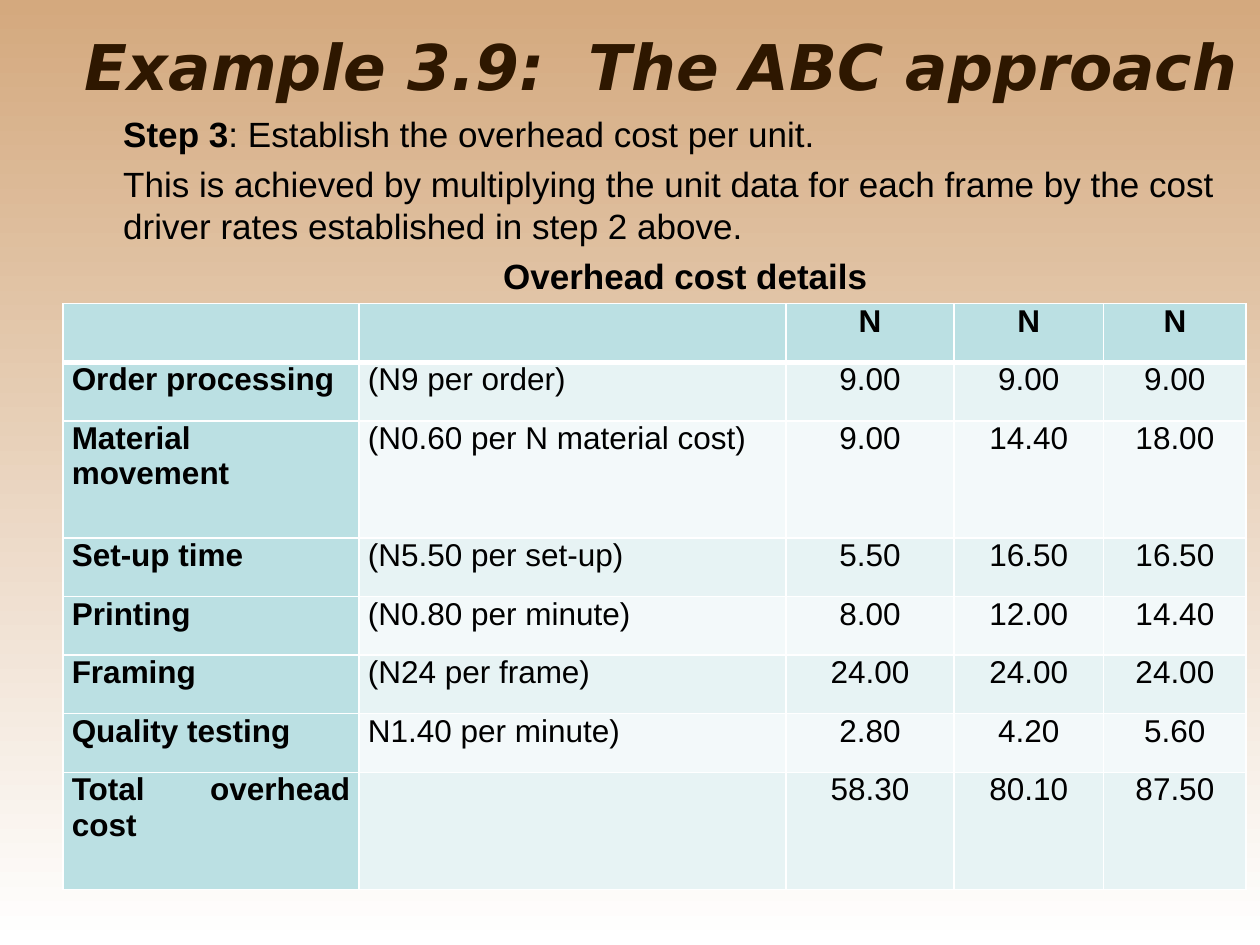
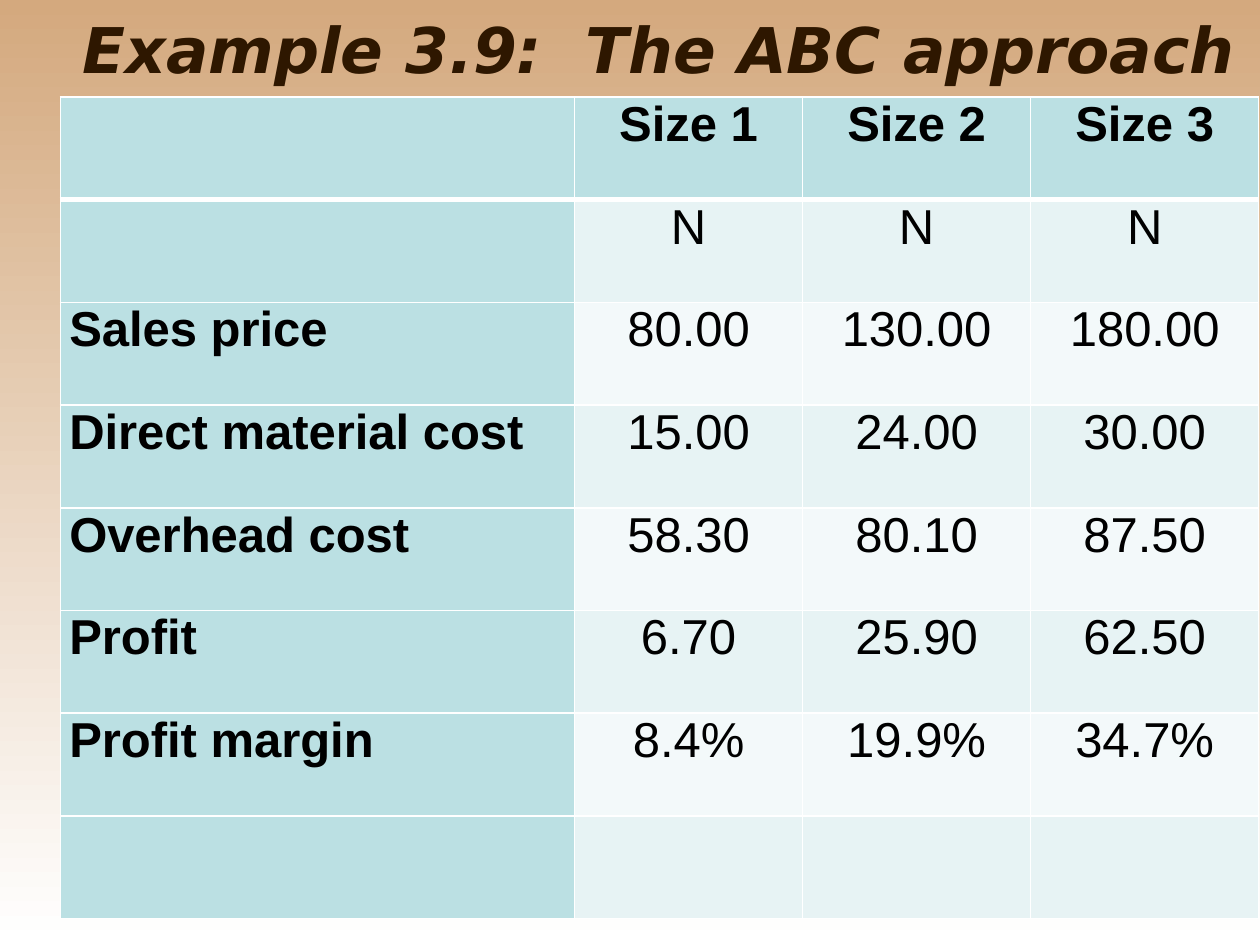
import pptx
import pptx.util
import pptx.dml.color
import pptx.enum.text
import pptx.oxml
import pptx.oxml.ns

Inch, Pt = pptx.util.Inches, pptx.util.Pt
ALIGN = pptx.enum.text.PP_ALIGN
ANCHOR = pptx.enum.text.MSO_ANCHOR

WIDE, HIGH = 10, 7.5
HUES = {"sand": "D4A97E", "white": "FFFFFF", "brown": "2E1700", "black": "000000",
        "head": "BBE0E3", "odd": "E7F3F4", "even": "F3F9FA"}
TITLE = "Example 3.9:  The ABC approach"
TITLE_FONT, FONT = "DejaVu Sans", "Arial"

INTRO = [
    [("Step 3", True), (": Establish the overhead cost per unit.", False)],
    [("This is achieved by multiplying the unit data for each frame by the cost "
      "driver rates established in step 2 above.", False)],
    [("Overhead cost details", True)],
]
COSTS = [
    ["", "", "N", "N", "N"],
    ["Order processing", "(N9 per order)", "9.00", "9.00", "9.00"],
    ["Material movement", "(N0.60 per N material cost)", "9.00", "14.40", "18.00"],
    ["Set-up time", "(N5.50 per set-up)", "5.50", "16.50", "16.50"],
    ["Printing", "(N0.80 per minute)", "8.00", "12.00", "14.40"],
    ["Framing", "(N24 per frame)", "24.00", "24.00", "24.00"],
    ["Quality testing", "N1.40 per minute)", "2.80", "4.20", "5.60"],
    ["Total overhead cost", "", "58.30", "80.10", "87.50"],
]
PROFITS = [
    ["", "Size 1", "Size 2", "Size 3"],
    ["", "N", "N", "N"],
    ["Sales price", "80.00", "130.00", "180.00"],
    ["Direct material cost", "15.00", "24.00", "30.00"],
    ["Overhead cost", "58.30", "80.10", "87.50"],
    ["Profit", "6.70", "25.90", "62.50"],
    ["Profit margin", "8.4%", "19.9%", "34.7%"],
    ["", "", "", ""],
]


def hue(name):
    return pptx.dml.color.RGBColor.from_string(HUES[name])


def style(font, size, bold, color="black", face=FONT):
    font.name, font.size, font.bold = face, Pt(size), bold
    font.color.rgb = hue(color)


def add_page(deck):
    """Blank slide with the shared fade from sand to white."""
    page = deck.slides.add_slide(deck.slide_layouts[6])
    fill = page.background.fill
    fill.gradient()
    fill.gradient_angle = 270
    for stop, name, place in zip(fill.gradient_stops, ("sand", "white"), (0, 1)):
        stop.color.rgb = hue(name)
        stop.position = place
    return page


def add_box(page, left, top, width, height):
    box = page.shapes.add_textbox(Inch(left), Inch(top), Inch(width), Inch(height))
    box.text_frame.word_wrap = True
    return box.text_frame


def add_title(page, left, top, height):
    frame = add_box(page, left, top, 0.95 * WIDE, height)
    frame.vertical_anchor = ANCHOR.MIDDLE
    frame.text = TITLE
    para = frame.paragraphs[0]
    para.alignment = ALIGN.CENTER
    font = para.runs[0].font
    style(font, 36, True, "brown", TITLE_FONT)
    font.italic = True


def add_intro(page):
    frame = add_box(page, 0.5, 0.84, 0.95 * WIDE, 1.55)
    for i, parts in enumerate(INTRO):
        para = frame.paragraphs[0] if i == 0 else frame.add_paragraph()
        para._p.get_or_add_pPr().set("marL", str(Inch(0.38)))
        if i:
            para.space_before = Pt(4.6)
        for text, bold in parts:
            run = para.add_run()
            run.text = text
            style(run.font, 20, bold)
    para.alignment = ALIGN.CENTER


def add_lines(cell, row):
    """White cell borders, heavy below the header row."""
    props = cell._tc.get_or_add_tcPr()
    heavy = {"T": row == 1, "B": row == 0}
    for side in "LRTB":
        width = Pt(3 if heavy.get(side) else 1)
        props.append(pptx.oxml.parse_xml(
            f'<a:ln{side} {pptx.oxml.ns.nsdecls("a")} w="{width}"><a:solidFill>'
            f'<a:srgbClr val="{HUES["white"]}"/></a:solidFill></a:ln{side}>'))


def fill_cell(cell, text, row, col, size, labels):
    add_lines(cell, row)
    edge = row == 0 or col == 0
    cell.fill.solid()
    cell.fill.fore_color.rgb = hue("head" if edge else "odd" if row % 2 else "even")
    cell.margin_left = cell.margin_right = Inch(0.07)
    cell.margin_top = cell.margin_bottom = 0
    cell.text = text
    para = cell.text_frame.paragraphs[0]
    para.alignment = ALIGN.JUSTIFY if col < labels else ALIGN.CENTER
    style(para.font, size, edge)
    for run in para.runs:
        style(run.font, size, edge)


def add_grid(page, data, left, top, height, cols, size, labels=1, tall=()):
    """Table with equal rows; rows in tall take two shares of the height."""
    table = page.shapes.add_table(len(data), len(cols), Inch(left), Inch(top),
                                  Inch(sum(cols)), Inch(height)).table
    for column, width in zip(table.columns, cols):
        column.width = Inch(width)
    share = height / (len(data) + len(tall))
    for r, texts in enumerate(data):
        table.rows[r].height = Inch(share * (2 if r in tall else 1))
        for c, text in enumerate(texts):
            fill_cell(table.cell(r, c), text, r, c, size, labels)


def main():
    deck = pptx.Presentation()
    deck.slide_width, deck.slide_height = Inch(WIDE), Inch(HIGH)

    # Overhead cost per unit
    page = add_page(deck)
    add_title(page, 0.5, 0.01, 1.01)
    add_intro(page)
    add_grid(page, COSTS, 0.5, 2.41, 4.65, [2.35, 3.39, 1.33, 1.19, 1.13], 18,
             labels=2, tall=(2, 7))

    # Profit by frame size
    page = add_page(deck)
    add_title(page, 0.48, 0, 0.77)
    add_grid(page, PROFITS, 0.48, 0.77, 6.52, [4.08] + [1.81] * 3, 28)

    deck.save("out.pptx")


if __name__ == "__main__":
    main()
